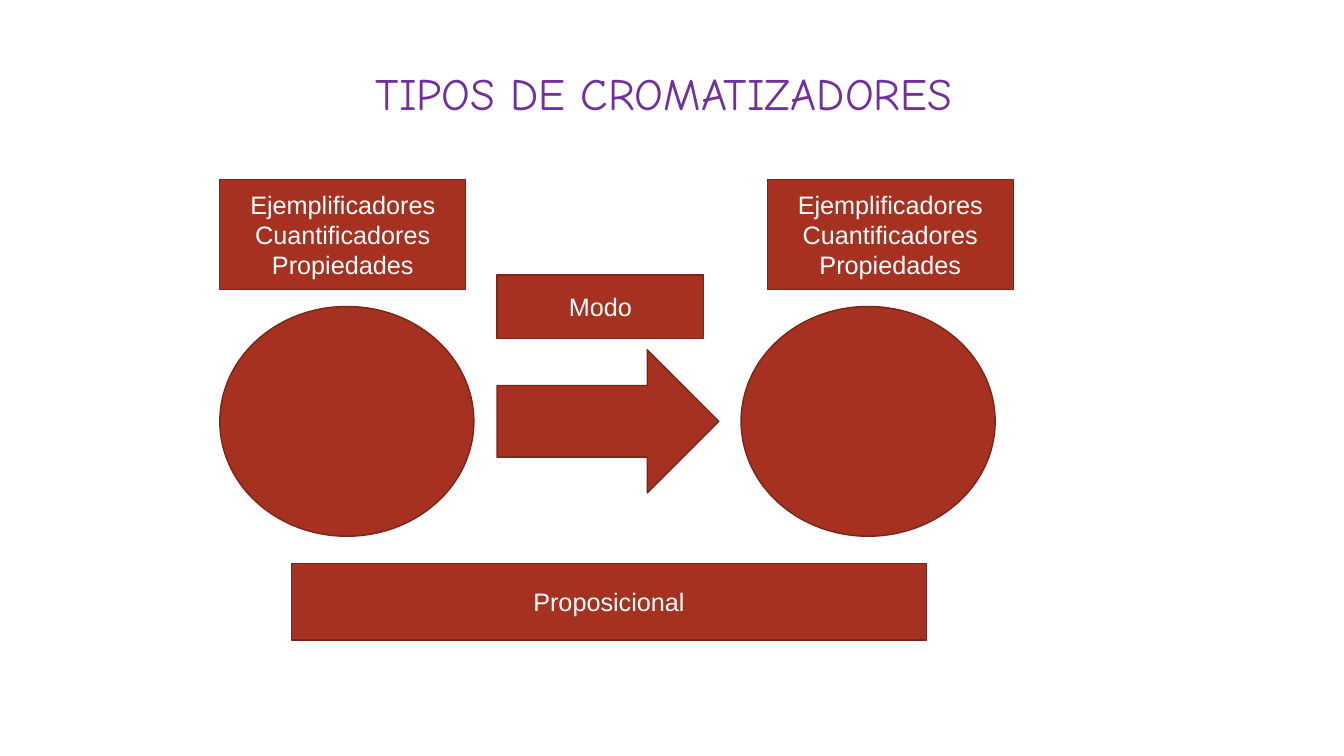
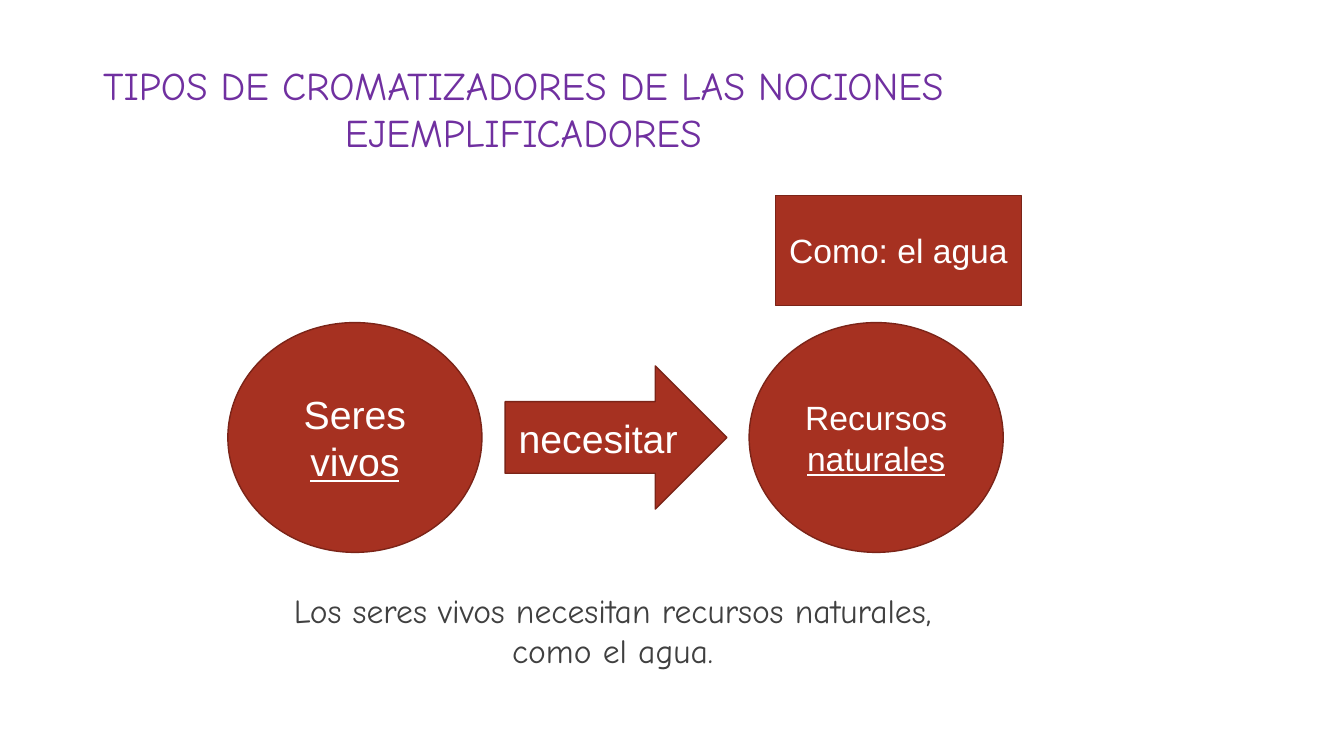
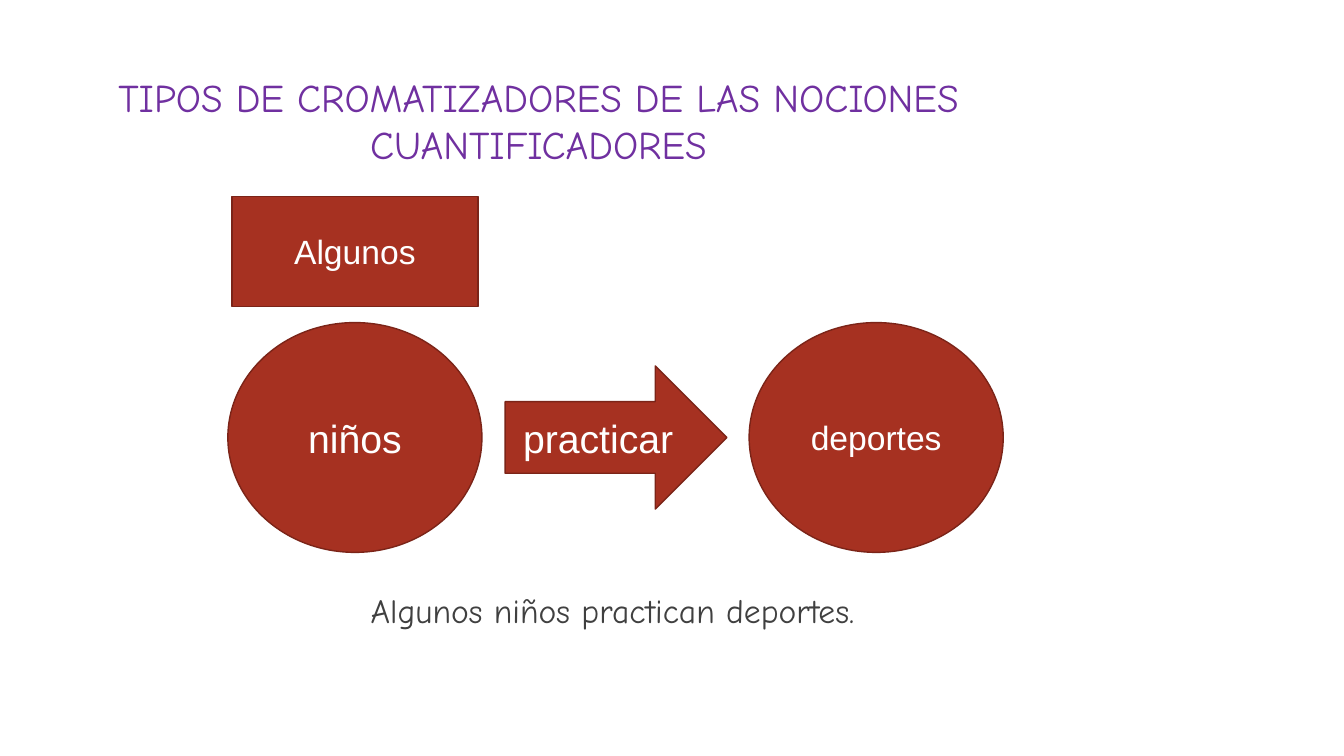
from pptx import Presentation
from pptx.dml.color import RGBColor
from pptx.enum.shapes import MSO_SHAPE
from pptx.enum.text import MSO_ANCHOR, MSO_AUTO_SIZE, PP_ALIGN
from pptx.util import Inches, Pt

PURPLE, RED, DARK_RED = "7030A0", "A63121", "7B2418"
WHITE, GREY = "FFFFFF", "404040"
TITLE_FONT, SHAPE_FONT = "Comic Neue", "Arial"
TITLE_WIDTH = 9
CIRCLE_SIZE = (2.52, 2.28)
LABEL_SIZE = (2.44, 1.09)


def write_text(frame, lines, size, font, color, anchor=MSO_ANCHOR.TOP):
    """Fill a text frame with centred lines; a "|" starts the underlined part."""
    frame.word_wrap = True
    frame.auto_size = MSO_AUTO_SIZE.NONE
    frame.vertical_anchor = anchor
    for index, line in enumerate(lines):
        paragraph = frame.add_paragraph() if index else frame.paragraphs[0]
        paragraph.alignment = PP_ALIGN.CENTER
        paragraph.font.size = Pt(size)
        paragraph.font.name = font
        paragraph.font.color.rgb = RGBColor.from_string(color)
        plain, _, underlined = line.partition("|")
        paragraph.add_run().text = plain
        if underlined:
            run = paragraph.add_run()
            run.text = underlined
            run.font.underline = True


def add_red_shape(slide, kind, left, top, width, height, lines=(), size=18):
    shape = slide.shapes.add_shape(
        kind, Inches(left), Inches(top), Inches(width), Inches(height))
    shape.shadow.inherit = False
    shape.fill.solid()
    shape.fill.fore_color.rgb = RGBColor.from_string(RED)
    shape.line.color.rgb = RGBColor.from_string(DARK_RED)
    shape.line.width = Pt(1)
    write_text(shape.text_frame, lines, size, SHAPE_FONT, WHITE, MSO_ANCHOR.MIDDLE)


kinds = ["Ejemplificadores", "Cuantificadores", "Propiedades"]
long_title = "TIPOS DE CROMATIZADORES DE LAS NOCIONES"

# Labels are (left, top) offsets from the first circle, then lines of text.
pages = [
    {"title": ["TIPOS DE CROMATIZADORES"], "title_at": (2.09, 0.6), "title_size": 32,
     "origin": (2.18, 3.04), "subject": [], "verb": [], "object": [],
     "labels": [(0, -1.26, kinds), (5.43, -1.26, kinds)], "label_size": 18},
    {"title": [long_title, "EJEMPLIFICADORES"], "title_at": (0.69, 0.56), "title_size": 28,
     "origin": (2.26, 3.2), "subject": ["Seres |vivos"], "verb": ["necesitar"],
     "object": ["Recursos |naturales"],
     "labels": [(5.43, -1.26, ["Como: el agua"])], "label_size": 24,
     "sentence": "Los seres vivos necesitan recursos naturales, como el agua."},
    {"title": [long_title, "CUANTIFICADORES"], "title_at": (0.84, 0.68), "title_size": 28,
     "origin": (2.26, 3.2), "subject": ["niños"], "verb": ["practicar"],
     "object": ["deportes"],
     "labels": [(0.04, -1.25, ["Algunos"])], "label_size": 24,
     "sentence": "Algunos niños practican deportes."},
]

presentation = Presentation()
presentation.slide_width = Inches(13.33)
presentation.slide_height = Inches(7.5)
title_only = presentation.slide_layouts[5]

for page in pages:
    slide = presentation.slides.add_slide(title_only)
    title = slide.shapes.title
    title.left, title.top = (Inches(value) for value in page["title_at"])
    title.width = Inches(TITLE_WIDTH)
    title.height = Inches(0.64 if len(page["title"]) == 1 else 1.04)
    write_text(title.text_frame, page["title"], page["title_size"], TITLE_FONT, PURPLE)

    left, top = page["origin"]
    add_red_shape(slide, MSO_SHAPE.OVAL, left, top, *CIRCLE_SIZE, page["subject"], 28)
    add_red_shape(slide, MSO_SHAPE.OVAL, left + 5.17, top, *CIRCLE_SIZE, page["object"], 24)
    add_red_shape(slide, MSO_SHAPE.RIGHT_ARROW, left + 2.75, top + 0.43, 2.2, 1.42,
                  page["verb"], 28)
    for across, down, lines in page["labels"]:
        add_red_shape(slide, MSO_SHAPE.RECTANGLE, left + across, top + down, *LABEL_SIZE,
                      lines, page["label_size"])

    if "sentence" in page:
        sentence = slide.shapes.add_textbox(
            Inches(2.65), Inches(5.8), Inches(6.85), Inches(0.91))
        write_text(sentence.text_frame, [page["sentence"]], 24, TITLE_FONT, GREY)

overview = presentation.slides[0]
add_red_shape(overview, MSO_SHAPE.RECTANGLE, 4.93, 2.73, 2.05, 0.63, ["Modo"])
add_red_shape(overview, MSO_SHAPE.RECTANGLE, 2.89, 5.59, 6.3, 0.76, ["Proposicional"])

presentation.save("out.pptx")
